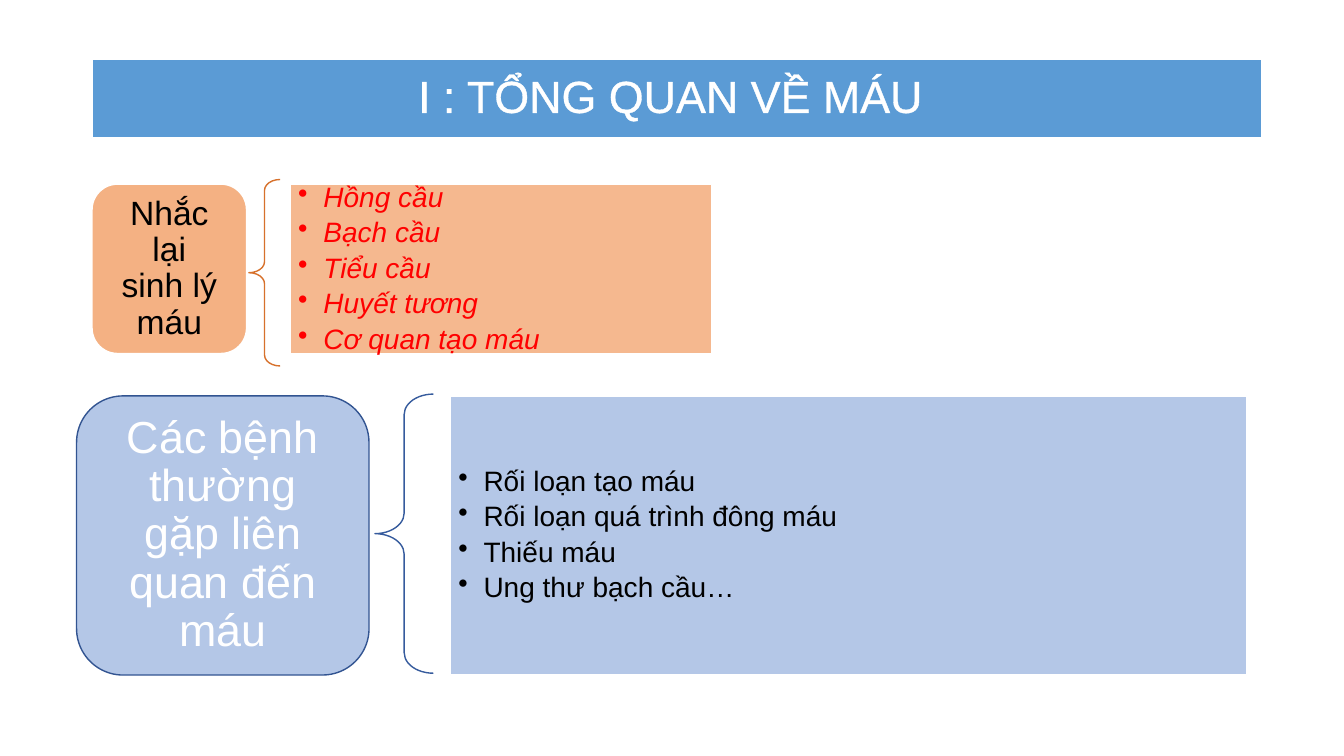
from dataclasses import dataclass
from typing import Optional

from lxml.etree import SubElement
from pptx import Presentation
from pptx.dml.color import RGBColor
from pptx.enum.shapes import MSO_SHAPE as Preset
from pptx.enum.text import MSO_ANCHOR as Anchor, PP_ALIGN as Align
from pptx.oxml import parse_xml
from pptx.oxml.ns import nsdecls, qn
from pptx.util import Pt

COLORS = {
    "white": "FFFFFF", "black": "000000", "red": "FF0000", "title": "5B9BD5",
    "orange": "F4B183", "orange brace": "D7712C",
    "blue": "B4C7E7", "blue border": "325491", "blue brace": "365B9D",
}
BULLET_INDENT = 18


@dataclass(frozen=True)
class Box:
    left: float
    top: float
    width: float
    height: float


@dataclass(frozen=True)
class TextStyle:
    size: float
    color: str
    italic: bool = False
    bulleted: bool = False
    insets: tuple[float, float] = (7.2, 3.6)


@dataclass(frozen=True)
class Topic:
    heading: str
    heading_box: Box
    heading_style: TextStyle
    border: str
    border_width: float
    brace_box: Box
    brace_color: str
    items: tuple[str, ...]
    items_box: Box
    items_style: TextStyle
    fill: str
    items_opacity: int = 100


TOPICS = (
    Topic("Nhắc lại sinh lý máu", Box(65.5, 131.3, 110.9, 121.5),
          TextStyle(24, "black", insets=(13.5, 5)), "white", 1.5,
          Box(177.8, 128.2, 22.3, 133.2), "orange brace",
          ("Hồng cầu", "Bạch cầu", "Tiểu cầu", "Huyết tương", "Cơ quan tạo máu"),
          Box(207.4, 131.8, 301, 121),
          TextStyle(20, "red", italic=True, bulleted=True, insets=(5.6, 5.6)),
          "orange", items_opacity=90),
    Topic("Các bệnh thường gặp liên quan đến máu", Box(54.7, 282.8, 208.9, 199.4),
          TextStyle(32, "white", insets=(18, 6.5)), "blue border", 1,
          Box(267.8, 281.5, 41.8, 199.4), "blue brace",
          ("Rối loạn tạo máu", "Rối loạn quá trình đông máu", "Thiếu máu",
           "Ung thư bạch cầu…"),
          Box(321.8, 282.8, 568.8, 199.4),
          TextStyle(20, "black", bulleted=True, insets=(5.6, 5.6)), "blue"),
)


def rgb(name: str) -> RGBColor:
    return RGBColor.from_string(COLORS[name])


def add_shape(slide, preset: Preset, box: Box, fill: Optional[str], line: str,
              line_width: float):
    shape = slide.shapes.add_shape(
        preset, Pt(box.left), Pt(box.top), Pt(box.width), Pt(box.height))
    shape.shadow.inherit = False
    if fill:
        shape.fill.solid()
        shape.fill.fore_color.rgb = rgb(fill)
    else:
        shape.fill.background()
    shape.line.color.rgb = rgb(line)
    shape.line.width = Pt(line_width)
    return shape


def write_text(shape, lines: tuple[str, ...], style: TextStyle) -> None:
    frame = shape.text_frame
    frame.word_wrap = True
    frame.vertical_anchor = Anchor.MIDDLE
    frame.margin_left = frame.margin_right = Pt(style.insets[0])
    frame.margin_top = frame.margin_bottom = Pt(style.insets[1])
    for index, line in enumerate(lines):
        paragraph = frame.add_paragraph() if index else frame.paragraphs[0]
        paragraph.line_spacing = 0.9
        paragraph.alignment = Align.LEFT if style.bulleted else Align.CENTER
        if style.bulleted:
            paragraph.space_after = Pt(3.75)
            properties = paragraph._p.get_or_add_pPr()
            properties.set("marL", str(Pt(BULLET_INDENT)))
            properties.set("indent", str(-Pt(BULLET_INDENT)))
            SubElement(properties, qn("a:buChar"), char="•")
        run = paragraph.add_run()
        run.text = line
        run.font.name = "Arial"
        run.font.size = Pt(style.size)
        run.font.italic = style.italic
        run.font.color.rgb = rgb(style.color)


def outline_text(shape, color: str) -> None:
    for run in shape.text_frame.paragraphs[0].runs:
        run.font._element.insert(0, parse_xml(
            f'<a:ln {nsdecls("a")} w="0"><a:solidFill>'
            f'<a:srgbClr val="{COLORS[color]}"/></a:solidFill></a:ln>'))


def set_opacity(shape, percent: int) -> None:
    color = shape.fill._xPr.find(qn("a:solidFill")).find(qn("a:srgbClr"))
    SubElement(color, qn("a:alpha"), val=str(percent * 1000))


def add_topic(slide, topic: Topic) -> None:
    heading = add_shape(slide, Preset.ROUNDED_RECTANGLE, topic.heading_box,
                        topic.fill, topic.border, topic.border_width)
    write_text(heading, (topic.heading,), topic.heading_style)

    brace = add_shape(slide, Preset.LEFT_BRACE, topic.brace_box, None,
                      topic.brace_color, 1)
    brace.adjustments[0] = 0.35

    items = add_shape(slide, Preset.RECTANGLE, topic.items_box, topic.fill, "white", 1)
    if topic.items_opacity < 100:
        set_opacity(items, topic.items_opacity)
    write_text(items, topic.items, topic.items_style)


def main() -> None:
    presentation = Presentation()
    presentation.slide_width, presentation.slide_height = Pt(960), Pt(540)
    slide = presentation.slides.add_slide(presentation.slide_layouts[6])

    # Title banner
    banner = add_shape(slide, Preset.RECTANGLE, Box(65.5, 41.8, 835.9, 56.9),
                       "title", "white", 1.5)
    write_text(banner, ("I : TỔNG QUAN VỀ MÁU ",), TextStyle(32, "white"))
    outline_text(banner, "white")

    # Topics with their bracketed lists
    for topic in TOPICS:
        add_topic(slide, topic)

    presentation.save("out.pptx")


if __name__ == "__main__":
    main()
